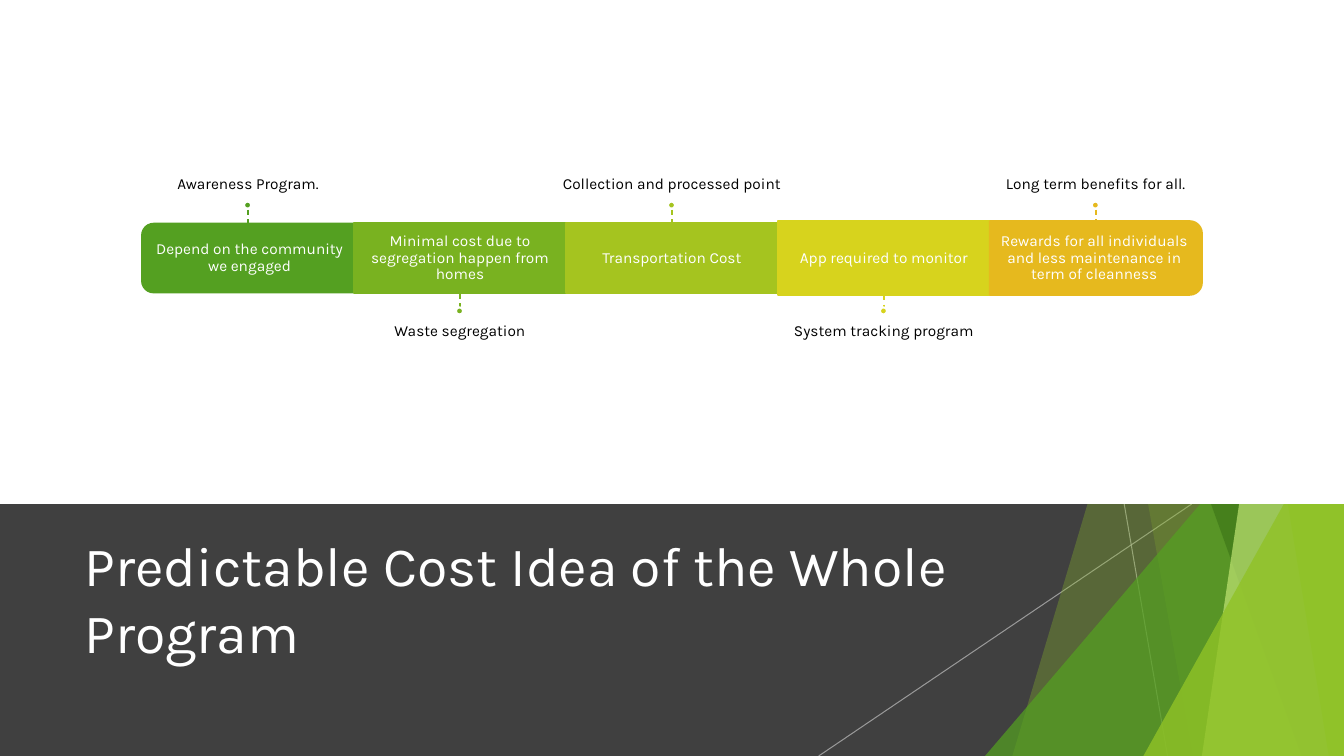
from lxml.etree import SubElement
from pptx import Presentation
from pptx.dml.color import RGBColor
from pptx.enum.dml import MSO_LINE
from pptx.enum.shapes import MSO_CONNECTOR, MSO_SHAPE
from pptx.enum.text import MSO_ANCHOR, MSO_AUTO_SIZE, PP_ALIGN
from pptx.oxml.ns import qn
from pptx.util import Inches, Pt

COLORS = {
    "white": "FFFFFF", "black": "000000", "band": "404040", "ray": "BFBFBF",
    "lime": "90C226", "green": "54A021", "forest": "3F7819", "pale": "C0E474",
    "leaf": "79B220", "olive": "A5C41F", "yellow": "D7D31D", "amber": "E6B91E",
}
WIDTH, HEIGHT, BAND_TOP = 13.33, 7.5, 5
STEPS = [
    ("green", 0.68, "Depend on the community we engaged", "Awareness Program."),
    ("leaf", 0.7, "Minimal cost due to segregation happen from homes", "Waste segregation"),
    ("olive", 0.7, "Transportation Cost", "Collection and processed point"),
    ("yellow", 0.73, "App required to monitor", "System tracking program"),
    ("amber", 0.73, "Rewards for all individuals and less maintenance in term of cleanness",
     "Long term benefits for all."),
]
FACETS = [
    ("lime", 30, 12.28, 10.04), ("lime", 20, 10.5, 11.83), ("green", 72, None, 9.77, 3.33),
    ("forest", 70, 10.21, 12.91), ("pale", 70, 13.03, 11.92), ("lime", 65, 11.96, 13.18),
    ("lime", 80, None, 11.34, 3.93),
]


def set_attributes(target, values):
    """Set every attribute named in the dict on the target."""
    for name, value in values.items():
        setattr(target, name, value)


class SlideBuilder:
    """Holds the text style and the slide being built."""

    def __init__(self, slide, font="Karla"):
        """Keep the slide and the font name."""
        self.slide = slide
        self.shapes = slide.shapes
        self.font = font

    def color(self, color_format, name, alpha=100):
        """Apply a named colour with an opacity in percent."""
        color_format.rgb = RGBColor.from_string(COLORS[name])
        if alpha < 100:
            element = color_format._xFill.find(qn("a:srgbClr"))
            SubElement(element, qn("a:alpha"), val=str(alpha * 1000))

    def paint(self, shape, fill, alpha=100, line=None):
        """Give a shape its fill and its outline, without a shadow."""
        shape.shadow.inherit = False
        shape.fill.solid()
        self.color(shape.fill.fore_color, fill, alpha)
        if line:
            self.color(shape.line.color, line)
            shape.line.width = Pt(1.5)
        else:
            shape.line.fill.background()

    def shape(self, kind, box, fill, alpha=100, line=None, rotation=0):
        """Add a preset shape."""
        shape = self.shapes.add_shape(kind, *map(Inches, box))
        shape.rotation = rotation
        self.paint(shape, fill, alpha, line)
        return shape

    def polygon(self, points, fill, alpha):
        """Add a closed outline through the points."""
        corners = [(Inches(x), Inches(y)) for x, y in points]
        builder = self.shapes.build_freeform(*corners[0], scale=1.0)
        builder.add_line_segments(corners[1:], close=True)
        self.paint(builder.convert_to_shape(), fill, alpha)

    def line(self, start, end, color, width, alpha=100, dash=MSO_LINE.SOLID):
        """Add a straight line."""
        line = self.shapes.add_connector(MSO_CONNECTOR.STRAIGHT, *map(Inches, (*start, *end)))
        self.color(line.line.color, color, alpha)
        set_attributes(line.line, {"width": Pt(width), "dash_style": dash})
        SubElement(line._element.spPr, qn("a:effectLst"))

    def set_text(self, shape, text, size, color, frame, paragraph):
        """Fill a shape with one formatted paragraph."""
        text_frame = shape.text_frame
        text_frame.text = text
        set_attributes(text_frame, {"word_wrap": True, "auto_size": MSO_AUTO_SIZE.NONE, **frame})
        first = text_frame.paragraphs[0]
        set_attributes(first, paragraph)
        font = first.runs[0].font
        set_attributes(font, {"name": self.font, "size": Pt(size)})
        self.color(font.color, color)

    def label(self, box, text, color, anchor, margins):
        """Add a small centred text box."""
        names = ("margin_left", "margin_top", "margin_right", "margin_bottom")
        frame = {"vertical_anchor": anchor, **dict(zip(names, map(Inches, margins)))}
        textbox = self.shapes.add_textbox(*map(Inches, box))
        self.set_text(textbox, text, 11, color, frame,
                      {"alignment": PP_ALIGN.CENTER, "line_spacing": 0.9})

    def title(self, box, text):
        """Place the title placeholder in front of the band."""
        title = self.shapes.title
        names = ("left", "top", "width", "height")
        set_attributes(title, dict(zip(names, map(Inches, box))))
        self.set_text(title, text, 39.6, "white", {"vertical_anchor": MSO_ANCHOR.MIDDLE},
                      {"alignment": PP_ALIGN.LEFT})
        self.shapes._spTree.append(title._element)

    def facet(self, color, alpha, top_x, bottom_x, top_y=-0.01):
        """Add a translucent facet that reaches the right edge."""
        if top_x is None:
            box = (bottom_x, top_y, WIDTH - bottom_x, HEIGHT - top_y)
            triangle = self.shape(MSO_SHAPE.ISOSCELES_TRIANGLE, box, color, alpha)
            triangle.adjustments[0] = 1.0
        else:
            points = [(top_x, top_y), (WIDTH, top_y), (WIDTH, HEIGHT), (bottom_x, HEIGHT)]
            self.polygon(points, color, alpha)

    def step(self, index, color, height, detail, caption):
        """Add one timeline step with its caption, stem and dot."""
        pitch = (11.92 - 1.41) / len(STEPS)
        left = 1.41 + index * pitch
        center, middle = left + pitch / 2, 2.56
        is_first, is_last = index == 0, index == len(STEPS) - 1
        if is_first or is_last:
            box = (center - height / 2, middle - pitch / 2, height, pitch)
            self.shape(MSO_SHAPE.ROUND_2_SAME_RECTANGLE, box, color, line=color,
                       rotation=270 if is_first else 90)
        else:
            box = (left, middle - height / 2, pitch, height)
            self.shape(MSO_SHAPE.RECTANGLE, box, color, line=color)
        text_left = left + 0.03 if is_first else left
        text_width = pitch - 0.03 if is_first or is_last else pitch
        self.label((text_left, middle - height / 2, text_width, height), detail, "white",
                   MSO_ANCHOR.MIDDLE, (0.09, 0.09, 0.09, 0.09))
        if index % 2 == 0:
            caption_top, anchor, margins = 0.7, MSO_ANCHOR.BOTTOM, (0, 0, 0, 0.09)
            stem_start, stem_end, dot_top = 2.08, middle - height / 2, 2
        else:
            caption_top, anchor, margins = 3.12, MSO_ANCHOR.TOP, (0, 0.09, 0, 0)
            stem_start, stem_end, dot_top = middle + height / 2, 3.05, 3.05
        self.label((center - 1.75, caption_top, 3.5, 1.3), caption, "black", anchor, margins)
        self.line((center, stem_start), (center, stem_end), color, 1, dash=MSO_LINE.DASH)
        self.shape(MSO_SHAPE.OVAL, (center - 0.04, dot_top, 0.07, 0.07), color, line="white")


def main():
    """Build and save the presentation."""
    presentation = Presentation()
    set_attributes(presentation, {"slide_width": Inches(WIDTH), "slide_height": Inches(HEIGHT)})
    builder = SlideBuilder(presentation.slides.add_slide(presentation.slide_layouts[5]))
    builder.shape(MSO_SHAPE.RECTANGLE, (0, BAND_TOP, WIDTH, HEIGHT - BAND_TOP), "band")
    for top_x, bottom_x in ((11.15, 11.58), (11.82, 8.12)):
        builder.line((top_x, BAND_TOP), (bottom_x, HEIGHT), "ray", 0.75, alpha=70)
    for facet in FACETS:
        builder.facet(*facet)
    builder.title((0.74, 5.21, 9.4, 1.44), "Predictable Cost Idea of the Whole Program")
    builder.shape(MSO_SHAPE.RECTANGLE, (0, 0, WIDTH, BAND_TOP), "white")
    for index, step in enumerate(STEPS):
        builder.step(index, *step)
    presentation.save("out.pptx")


if __name__ == "__main__":
    main()
